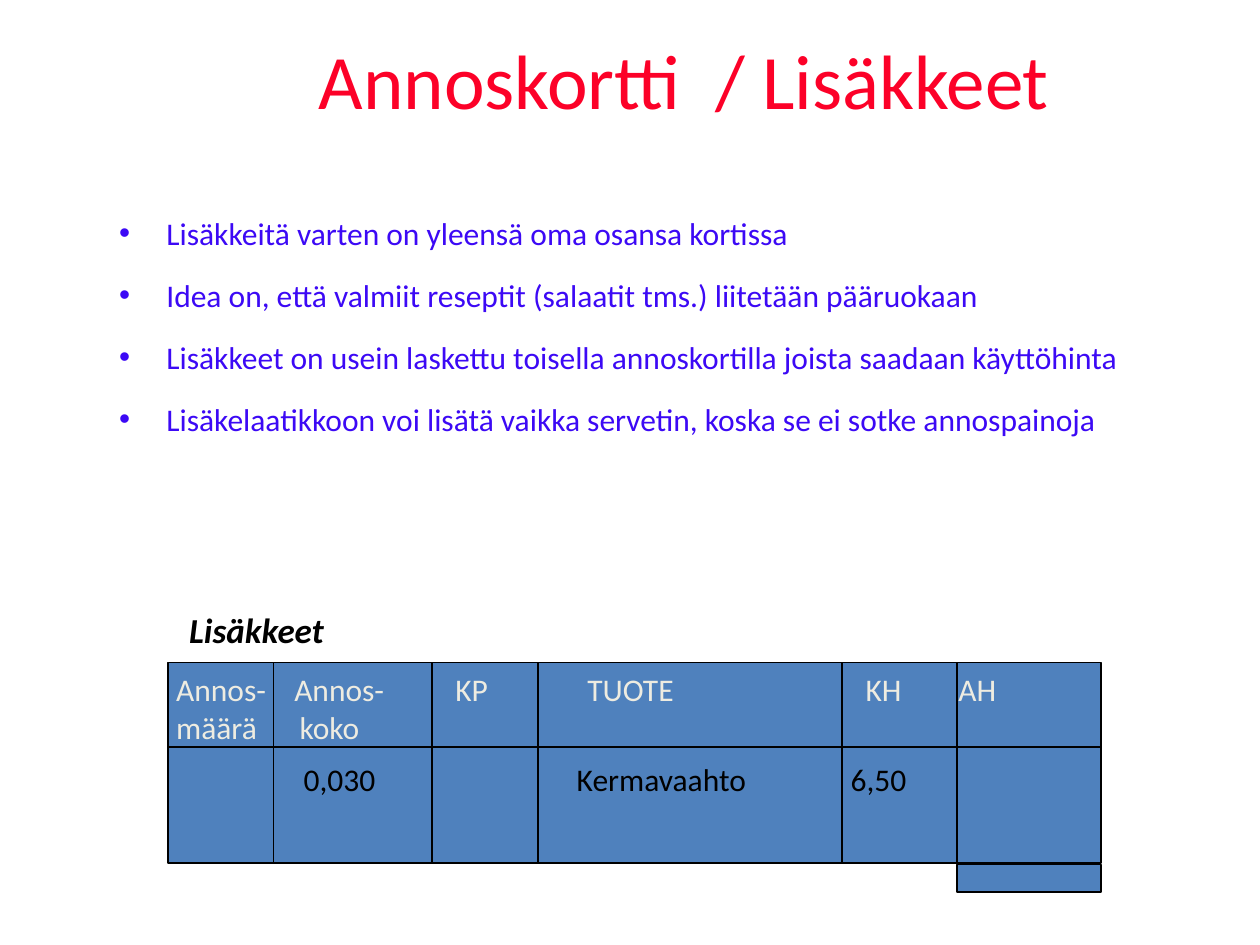
"""Build the slide on side dishes in a portion card."""
from pptx import Presentation
from pptx.dml.color import RGBColor
from pptx.enum import shapes, text
from pptx.oxml.ns import qn
from pptx.util import Pt
from lxml import etree

RED = RGBColor(0xFC, 0x01, 0x28)
VIOLET = RGBColor(0x3C, 0x09, 0xF5)
BLUE = RGBColor(0x4F, 0x81, 0xBD)
CREAM = RGBColor(0xEE, 0xEC, 0xE1)
BLACK = RGBColor(0, 0, 0)

CARD_LEFT, CARD_TOP, CARD_WIDTH, CARD_HEIGHT = 96, 378.5, 533, 114.5
CARD_RIGHT, CARD_BOTTOM = CARD_LEFT + CARD_WIDTH, CARD_TOP + CARD_HEIGHT
HEADER_BOTTOM = 427
COLUMN_EDGES = (156.25, 247, 307.5, 481, 547)
POINTS = (
    "Lisäkkeitä varten on yleensä oma osansa kortissa",
    "Idea on, että valmiit reseptit (salaatit tms.) liitetään pääruokaan",
    "Lisäkkeet on usein laskettu toisella annoskortilla joista saadaan käyttöhinta",
    "Lisäkelaatikkoon voi lisätä vaikka servetin, koska se ei sotke annospainoja",
)


def write(paragraph, wording, size=18, color=BLACK, bold=False, italic=False):
    """Add a formatted run to a paragraph."""
    run = paragraph.add_run()
    run.text = wording
    font = run.font
    font.name, font.size, font.bold, font.italic = "Calibri", Pt(size), bold, italic
    font.color.rgb = color


class Card:
    """Hold the line style and the current slide, and draw each kind of element."""

    def __init__(self, slide, line_color=BLACK, line_width=1):
        self.slide = slide
        self.line_color, self.line_width = line_color, line_width

    def outline(self, line):
        """Apply the common line style."""
        line.color.rgb = self.line_color
        line.width = Pt(self.line_width)

    def title(self, wording, *box):
        """Place and fill the title."""
        heading = self.slide.shapes.title
        heading.left, heading.top, heading.width, heading.height = map(Pt, box)
        heading.text_frame.vertical_anchor = text.MSO_ANCHOR.MIDDLE
        paragraph = heading.text_frame.paragraphs[0]
        paragraph.alignment = text.PP_ALIGN.CENTER
        write(paragraph, wording, 44, RED)

    def lines(self, rows, *box, tabs=(), bullets=False, **style):
        """Add a text box with one paragraph a row, with tab stops or bullets."""
        frame = self.slide.shapes.add_textbox(*map(Pt, box)).text_frame
        frame.word_wrap = True
        for index, row in enumerate(rows):
            paragraph = frame.add_paragraph() if index else frame.paragraphs[0]
            write(paragraph, row, **style)
            if bullets:
                self.bullet(paragraph)
            if tabs:
                self.tab_stops(paragraph, tabs[index])

    def bullet(self, paragraph):
        """Give a paragraph a hanging bullet and open spacing."""
        paragraph.line_spacing, paragraph.space_before = 1.5, Pt(3)
        properties = paragraph._p.get_or_add_pPr()
        properties.set("marL", str(Pt(27)))
        properties.set("indent", str(-Pt(27)))
        etree.SubElement(properties, qn("a:buFont")).set("typeface", "Arial")
        etree.SubElement(properties, qn("a:buChar")).set("char", "•")

    def tab_stops(self, paragraph, positions):
        """Set left tab stops on a paragraph."""
        stops = etree.SubElement(paragraph._p.get_or_add_pPr(), qn("a:tabLst"))
        for position in positions:
            stop = etree.SubElement(stops, qn("a:tab"))
            stop.set("pos", str(Pt(position)))
            stop.set("algn", "l")

    def box(self, *box):
        """Add a filled, outlined rectangle."""
        area = self.slide.shapes.add_shape(shapes.MSO_SHAPE.RECTANGLE, *map(Pt, box))
        area.shadow.inherit = False
        area.fill.solid()
        area.fill.fore_color.rgb = BLUE
        self.outline(area.line)

    def rule(self, *ends):
        """Add a straight line."""
        rule = self.slide.shapes.add_connector(shapes.MSO_CONNECTOR.STRAIGHT, *map(Pt, ends))
        self.outline(rule.line)
        etree.SubElement(rule._element.spPr, qn("a:effectLst"))


def main():
    """Build and save the slide."""
    deck = Presentation()
    deck.slide_width, deck.slide_height = Pt(720), Pt(540)
    card = Card(deck.slides.add_slide(deck.slide_layouts[5]))
    card.title("Annoskortti  / Lisäkkeet", 87, 0, 608, 90)
    card.lines(POINTS, 61, 108, 613.5, 126, bullets=True, color=VIOLET)

    card.box(CARD_LEFT, CARD_TOP, CARD_WIDTH, CARD_HEIGHT)
    card.rule(CARD_LEFT, HEADER_BOTTOM, CARD_RIGHT, HEADER_BOTTOM)
    for edge in COLUMN_EDGES:
        card.rule(edge, CARD_TOP, edge, CARD_BOTTOM)
    total_left = COLUMN_EDGES[-1]
    card.box(total_left, CARD_BOTTOM + 1, CARD_RIGHT - total_left, 16)

    card.lines(["Lisäkkeet"], 101, 344, 93, 31, size=20, bold=True, italic=True)
    card.lines(["Annos-\tAnnos-\tKP\tTUOTE\tKH\tAH", "määrä\tkoko"],
               93.6, 379.5, 535, 50, color=CREAM,
               tabs=[(67.5, 159.5, 235, 394, 447), (70.5,)])
    card.lines(["\t0,030\tKermavaahto\t6,50"], 95, 430.5, 435, 29,
               tabs=[(71.5, 227.5, 384)])
    deck.save("out.pptx")


if __name__ == "__main__":
    main()
